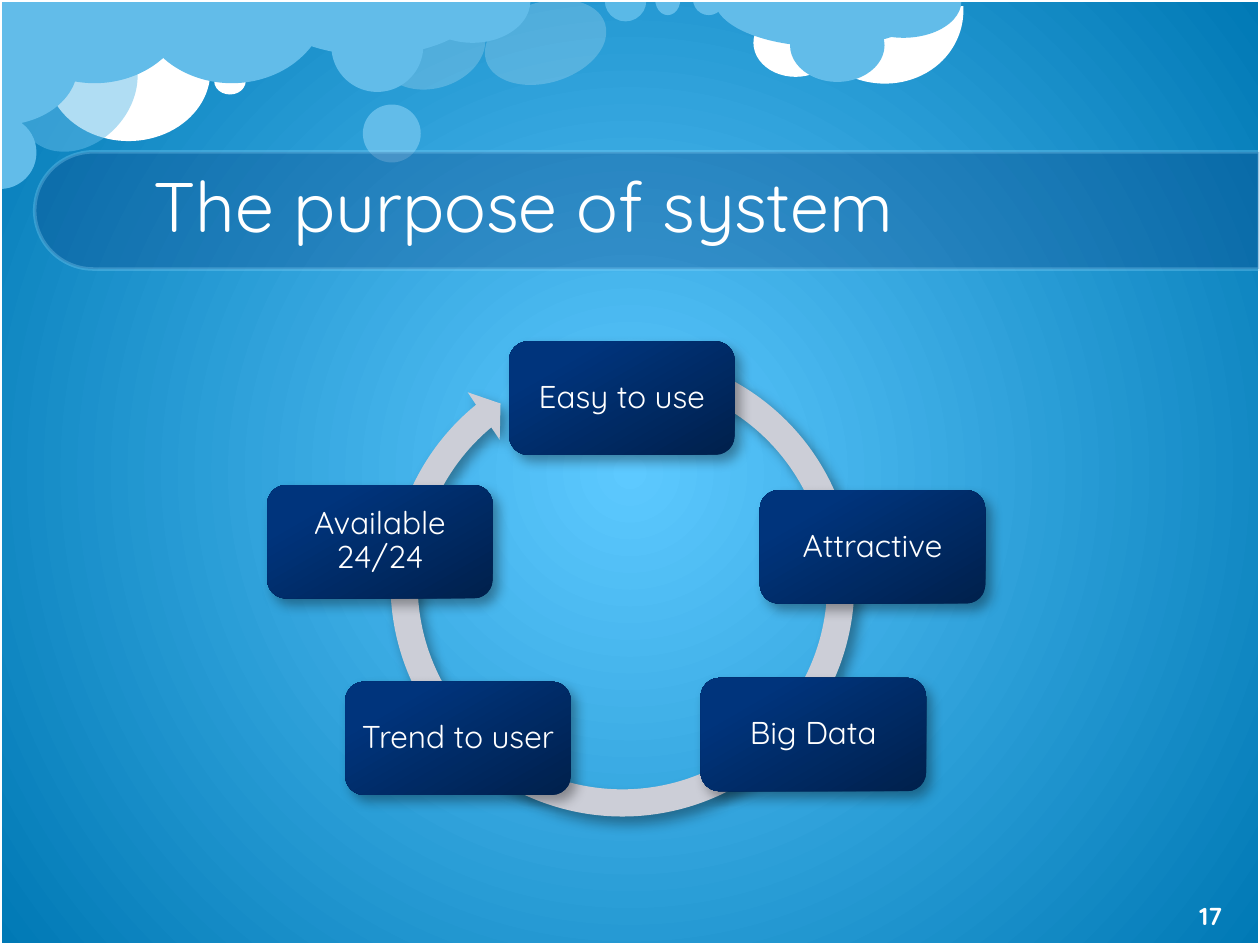
from dataclasses import dataclass

from lxml.etree import SubElement
from pptx import Presentation
from pptx.dml.color import RGBColor
from pptx.enum.shapes import MSO_SHAPE as Shape
from pptx.enum.text import MSO_ANCHOR as Anchor, MSO_AUTO_SIZE as AutoSize, PP_ALIGN as Align
from pptx.oxml.ns import qn
from pptx.util import Pt

EMU_PER_PX = 9144
HALF = (0, 108)


@dataclass(frozen=True)
class Theme:
    """Colours, font and type sizes of the slide."""
    font: str = "Quicksand"
    white: str = "FFFFFF"
    cloud: str = "62BCE9"
    pale: str = "8FD9FB"
    band: str = "073779"
    ring: str = "CCCED7"
    shadow: str = "000000"
    sky: tuple = ((0, "5DC9FF"), (100, "0079B5"))
    node: tuple = ((0, "00204C"), (80, "00347C"), (100, "00347D"))
    title_size: int = 40
    title_leading: int = 56
    node_size: int = 18
    number_size: int = 14


THEME = Theme()

CLOUDS = (
    (Shape.OVAL, (311, -5, 64, 86), 72.8, (), THEME.white, 20),
    (Shape.OVAL, (37, 1, 130, 111), 0, (), THEME.white, 100),
    (Shape.ARC, (639, -60, 121, 131), 106.5, (151.8, 44.48), THEME.white, 100),
    (Shape.OVAL, (598, 7, 67, 54), 0, (), THEME.white, 100),
    (Shape.PIE, (-1, -66, 152, 132), 0, HALF, THEME.cloud, 100),
    (Shape.PIE, (208, -44, 175, 88), 0, HALF, THEME.cloud, 100),
    (Shape.OVAL, (288, 83, 46, 46), 0, (), THEME.cloud, 100),
    (Shape.OVAL, (19, 18, 85, 107), 41.8, (), THEME.cloud, 50),
    (Shape.PIE, (-29, 92, 58, 58), 270, HALF, THEME.cloud, 100),
    (Shape.OVAL, (170, 54, 25, 21), 0, (), THEME.white, 100),
    (Shape.PIE, (108, -66, 152, 132), 0, HALF, THEME.cloud, 100),
    (Shape.PIE, (567, -38, 175, 75), 0, HALF, THEME.cloud, 100),
    (Shape.OVAL, (627, 7, 75, 58), 0, (), THEME.cloud, 100),
    (Shape.PIE, (671, -28, 92, 58), 0, HALF, THEME.cloud, 100),
    (Shape.OVAL, (401, -16, 64, 99), 72.8, (), THEME.white, 20),
    (Shape.PIE, (480, -16, 33, 33), 0, HALF, THEME.pale, 50),
    (Shape.PIE, (520, -13, 20, 25), 0, HALF, THEME.cloud, 100),
    (Shape.PIE, (550, -13, 25, 25), 0, HALF, THEME.cloud, 100),
    (Shape.OVAL, (263, 0, 73, 73), 0, (), THEME.cloud, 100),
    (Shape.PIE, (329, -33, 92, 67), 0, HALF, THEME.cloud, 100),
    (Shape.PIE, (-47, -9, 93, 124), 270, HALF, THEME.cloud, 100),
)

PURPOSES = (
    ("Easy to use", 192, 3),
    ("Attractive", 391, 121),
    ("Big Data", 344, 270),
    ("Trend to user", 62, 273),
    ("Available 24/24", 0, 117),
)


def px(*lengths):
    """Turn px lengths into EMU."""
    return [length * EMU_PER_PX for length in lengths]


def add_preset(shapes, kind, box, color=None, rotation=0, adjustments=()):
    """Add an outline-free preset shape, filled when a colour is given."""
    shape = shapes.add_shape(kind, *px(*box))
    shape.rotation = rotation
    shape.shadow.inherit = False
    shape.line.fill.background()
    if color:
        shape.fill.solid()
        shape.fill.fore_color.rgb = RGBColor.from_string(color)
    else:
        shape.fill.background()
    for index, value in enumerate(adjustments):
        shape.adjustments[index] = value
    return shape


def set_line(shape, color, width):
    """Give a shape a solid outline."""
    shape.line.color.rgb = RGBColor.from_string(color)
    shape.line.width = Pt(width)


def set_opacity(shape, percent):
    """Apply one opacity to the fill and line colours of a shape."""
    for color in shape.element.spPr.iter(qn("a:srgbClr")):
        SubElement(color, qn("a:alpha"), val=str(percent * 1000))


def set_stops(gradient, stops):
    """Empty a gradient fill and give it new colour stops."""
    for child in list(gradient):
        gradient.remove(child)
    stop_list = SubElement(gradient, qn("a:gsLst"))
    for position, color in stops:
        stop = SubElement(stop_list, qn("a:gs"), pos=str(position * 1000))
        SubElement(stop, qn("a:srgbClr"), val=color)


def add_shadow(shape):
    """Add the soft shadow that falls to the lower right."""
    effects = shape.element.spPr.find(qn("a:effectLst"))
    outer = SubElement(effects, qn("a:outerShdw"), blurRad=str(Pt(7)), dist=str(Pt(5)),
                       dir=str(50 * 60000), algn="tl", rotWithShape="0")
    color = SubElement(outer, qn("a:srgbClr"), val=THEME.shadow)
    SubElement(color, qn("a:alpha"), val="35000")


def write_text(shape, text, size, align, bold=False):
    """Write one vertically centred white paragraph and return it."""
    frame = shape.text_frame
    frame.text = text
    frame.word_wrap = True
    frame.auto_size = AutoSize.NONE
    frame.vertical_anchor = Anchor.MIDDLE
    paragraph = frame.paragraphs[0]
    paragraph.alignment = align
    font = paragraph.runs[0].font
    font.name, font.size, font.bold = THEME.font, Pt(size), bold
    font.color.rgb = RGBColor.from_string(THEME.white)
    return paragraph


def paint_sky(slide):
    """Fill the background with a radial gradient."""
    slide.background.fill.gradient()
    gradient = slide.element.find(".//" + qn("a:gradFill"))
    set_stops(gradient, THEME.sky)
    radial = SubElement(gradient, qn("a:path"), path="circle")
    SubElement(radial, qn("a:fillToRect"), l="50000", t="50000", r="50000", b="50000")


def add_clouds(slide, box):
    """Group the clouds along the top edge of the box."""
    left, top, _, _ = box
    shapes = slide.shapes.add_group_shape().shapes
    for kind, (x, y, width, height), rotation, adjustments, color, opacity in CLOUDS:
        cloud = add_preset(shapes, kind, (left + x, top + y, width, height),
                           color, rotation, adjustments)
        if opacity < 100:
            set_opacity(cloud, opacity)


def add_frame(slide, box):
    """Outline the box in white."""
    set_line(add_preset(slide.shapes, Shape.RECTANGLE, box), THEME.white, 2)


def add_title_band(slide, box, text):
    """Place the rounded band and the title over it."""
    left, top, width, height = box
    upright = (left + (width - height) // 2, top - (width - height) // 2, height, width)
    band = add_preset(slide.shapes, Shape.ROUND_2_SAME_RECTANGLE, upright,
                      THEME.band, 270, (0.5, 0))
    set_line(band, THEME.pale, 2)
    set_opacity(band, 30)
    title = slide.shapes.title
    title.left, title.top, title.width, title.height = px(left + 84, top - 2, 810, 78)
    paragraph = write_text(title, text, THEME.title_size, Align.LEFT)
    paragraph.line_spacing = Pt(THEME.title_leading)
    title.element.getparent().append(title.element)


def add_cycle(slide, box):
    """Group the circular arrow and the purposes around it."""
    left, top, _, height = box
    shapes = slide.shapes.add_group_shape().shapes
    ring = add_preset(shapes, Shape.CIRCULAR_ARROW, (left + 86, top, height, height),
                      THEME.ring, 0, (0.055, 3.307, 138.329, 173.514, 0.058))
    add_shadow(ring)
    for text, x, y in PURPOSES:
        node = add_preset(shapes, Shape.ROUNDED_RECTANGLE, (left + x, top + y, 179, 90))
        node.fill.gradient()
        gradient = node.element.spPr.find(qn("a:gradFill"))
        set_stops(gradient, THEME.node)
        SubElement(gradient, qn("a:lin"), ang=str(240 * 60000), scaled="0")
        add_shadow(node)
        write_text(node, text, THEME.node_size, Align.CENTER).line_spacing = 0.9
        frame = node.text_frame
        frame.margin_left, frame.margin_top, frame.margin_right, frame.margin_bottom = px(7, 7, 7, 7)


def add_slide_number(slide, box, number):
    """Write the slide number in the box."""
    textbox = slide.shapes.add_textbox(*px(*box))
    write_text(textbox, number, THEME.number_size, Align.CENTER, bold=True)


def main():
    """Build the slide and save it."""
    presentation = Presentation()
    presentation.slide_width, presentation.slide_height = px(1000, 750)
    slide = presentation.slides.add_slide(presentation.slide_layouts[5])
    paint_sky(slide)
    add_clouds(slide, (0, 0, 1000, 150))
    add_frame(slide, (0, 0, 1000, 750))
    add_title_band(slide, (28, 120, 972, 93), "The purpose of system")
    add_cycle(slide, (212, 268, 570, 392))
    add_slide_number(slide, (922, 705, 78, 43), "17")
    presentation.save("out.pptx")


if __name__ == "__main__":
    main()
